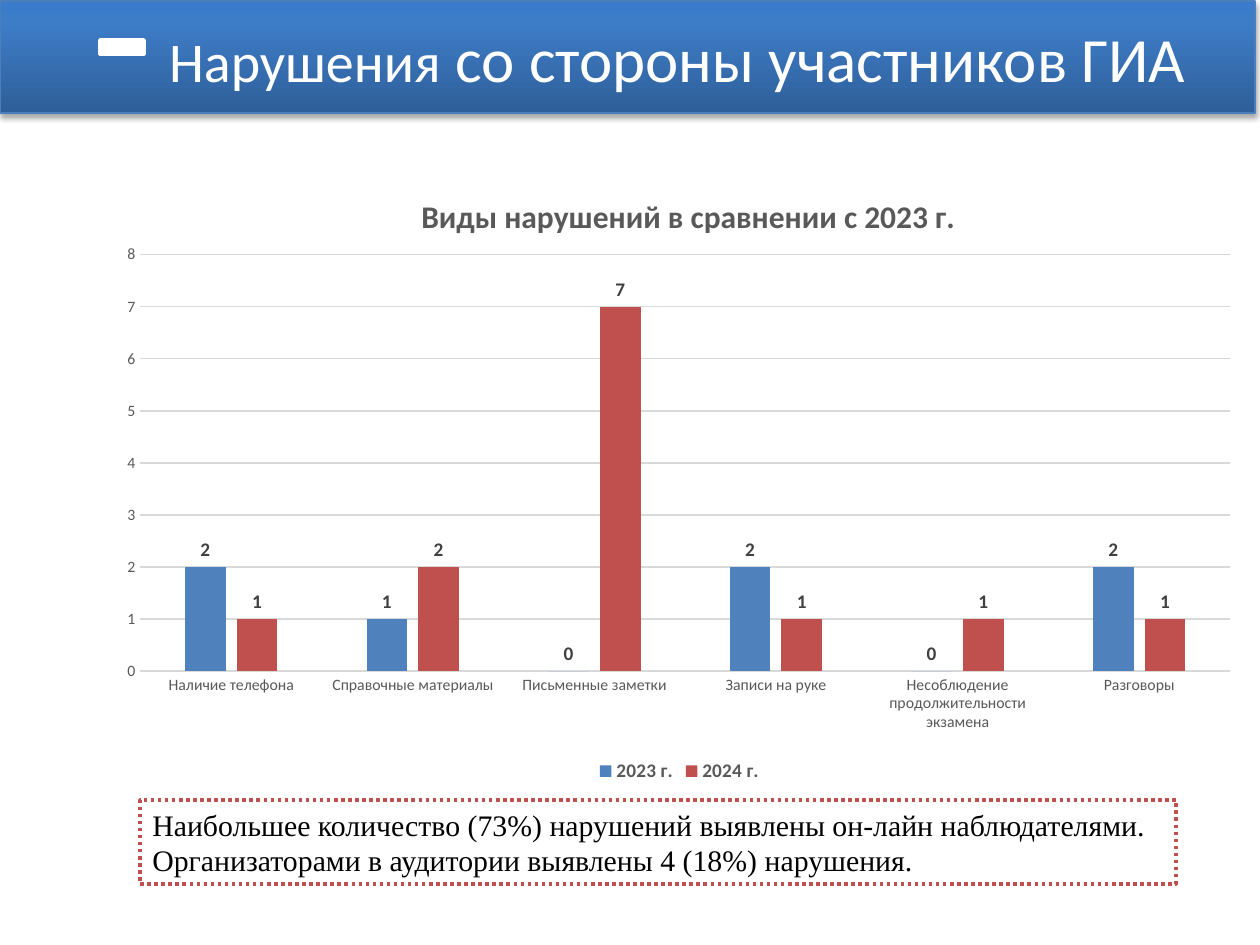
from copy import deepcopy

from lxml import etree
from pptx import Presentation
from pptx.chart.data import CategoryChartData
from pptx.dml.color import RGBColor
from pptx.enum.chart import XL_CHART_TYPE, XL_LABEL_POSITION, XL_LEGEND_POSITION, XL_TICK_MARK
from pptx.enum.dml import MSO_LINE
from pptx.enum.shapes import MSO_SHAPE
from pptx.enum.text import MSO_ANCHOR, MSO_AUTO_SIZE, PP_ALIGN
from pptx.oxml import parse_xml
from pptx.oxml.ns import nsdecls, qn
from pptx.util import Pt

PX = 914400 / 126
COLUMNS = XL_CHART_TYPE.COLUMN_CLUSTERED
OUTSIDE = XL_LABEL_POSITION.OUTSIDE_END
BOTTOM = XL_LEGEND_POSITION.BOTTOM
NO_TICK = XL_TICK_MARK.NONE
RECT = MSO_SHAPE.RECTANGLE
MIDDLE = MSO_ANCHOR.MIDDLE
CENTER, JUSTIFY = PP_ALIGN.CENTER, PP_ALIGN.JUSTIFY


def rgb(color):
    return RGBColor.from_string(color)


def set_font(font, color, **values):
    font.color.rgb = rgb(color)
    for name, value in values.items():
        setattr(font, name, value)


prs = Presentation()
prs.slide_width, prs.slide_height = int(1260 * PX), int(945 * PX)
s = prs.slides.add_slide(prs.slide_layouts[5])

sp = s.shapes.title
sp.left, sp.top, sp.width, sp.height = [int(v * PX) for v in (0, 1, 1255, 112)]
sp.fill.gradient()
sp.fill.gradient_angle = 90
stops = next(sp.element.iter(qn("a:gsLst")))
stops.append(deepcopy(stops[0]))
for stop, (pos, color) in zip(sp.fill.gradient_stops, [(0, "2F5F99"), (0.8, "3D7CC7"), (1, "3A7CCB")]):
    stop.position = pos
    stop.color.rgb = rgb(color)
sp.line.color.rgb = rgb("4B7EBC")
sp.line.width = Pt(0.75)
sp.shadow.inherit = False
effects = next(sp.element.iter(qn("a:effectLst")))
shadow = etree.SubElement(effects, qn("a:outerShdw"), blurRad="40000", dist="23000", dir="5400000", rotWithShape="0")
shade = etree.SubElement(shadow, qn("a:srgbClr"), val="000000")
etree.SubElement(shade, qn("a:alpha"), val="35000")
tf = sp.text_frame
frame_format = {"word_wrap": True, "auto_size": MSO_AUTO_SIZE.NONE, "vertical_anchor": MIDDLE,
                "margin_left": int(112 * PX), "margin_right": int(12 * PX)}
for name, value in frame_format.items():
    setattr(tf, name, value)
p = tf.paragraphs[0]
p.alignment = CENTER
for text, size in [("Нарушения", 32), (" со стороны участников ГИА", 36)]:
    r = p.add_run()
    r.text = text
    set_font(r.font, "FFFFFF", name="Calibri", size=Pt(size), bold=False)

boxes = []
for box, line in [((100, 40, 44, 14), "FFFFFF"), ((140, 800, 1036, 84), "C0504D")]:
    sp = s.shapes.add_shape(RECT, *[int(v * PX) for v in box])
    sp.shadow.inherit = False
    sp.fill.solid()
    sp.fill.fore_color.rgb = rgb("FFFFFF")
    sp.line.color.rgb = rgb(line)
    sp.line.width = Pt(2)
    boxes.append(sp)
note = boxes[1]
note.line.dash_style = MSO_LINE.ROUND_DOT
tf = note.text_frame
tf.word_wrap = True
tf.vertical_anchor = MIDDLE
tf.text = ("Наибольшее количество (73%) нарушений выявлены он-лайн наблюдателями.\n"
           "Организаторами в аудитории выявлены 4 (18%) нарушения.")
for p in tf.paragraphs:
    p.alignment = JUSTIFY
    set_font(p.runs[0].font, "000000", name="Times New Roman", size=Pt(17))

data = CategoryChartData(number_format="General")
data.categories = ["Наличие телефона", "Справочные материалы", "Письменные заметки",
                   "Записи на руке", "Несоблюдение продолжительности экзамена", "Разговоры"]
data.add_series("2023 г.", [2, 1, 0, 2, 0, 2])
data.add_series("2024 г.", [1, 2, 7, 1, 1, 1])
frame = s.shapes.add_chart(COLUMNS, *[int(v * PX) for v in (106, 157, 1147, 631)], data)
chart = frame.chart
set_font(chart.font, "000000", name="Calibri", size=Pt(10))

chart.has_title = True
chart.chart_title.include_in_layout = False
tf = chart.chart_title.text_frame
tf.text = "Виды нарушений в сравнении с 2023 г."
set_font(tf.paragraphs[0].runs[0].font, "595959", name="Calibri", size=Pt(18), bold=True)

chart.has_legend = True
chart.legend.position = BOTTOM
chart.legend.include_in_layout = False
set_font(chart.legend.font, "595959", name="Calibri", size=Pt(11), bold=True)

cat_axis, val_axis = chart.category_axis, chart.value_axis
for axis in (cat_axis, val_axis):
    axis.major_tick_mark = axis.minor_tick_mark = NO_TICK
    set_font(axis.tick_labels.font, "595959", name="Calibri", size=Pt(9), bold=False)
for name, value in {"minimum_scale": 0, "maximum_scale": 8, "major_unit": 1, "has_major_gridlines": True}.items():
    setattr(val_axis, name, value)
val_axis.format.line.fill.background()
for line in (cat_axis.format.line, val_axis.major_gridlines.format.line):
    line.color.rgb = rgb("D9D9D9")
    line.width = Pt(0.75)

plot = chart.plots[0]
plot.gap_width, plot.overlap = 219, -27
plot.vary_by_categories = False
for series, color in zip(plot.series, ["4F81BD", "C0504D"]):
    series.format.fill.solid()
    series.format.fill.fore_color.rgb = rgb(color)
    labels = series.data_labels
    labels.show_value = True
    labels.position = OUTSIDE
    set_font(labels.font, "404040", name="Calibri", size=Pt(11), bold=True)

c_chart = chart.element.find(qn("c:chart"))
layouts = [
    ("c:title", 1, {"xMode": "edge", "yMode": "edge", "x": 0.27, "y": 0.05}),
    ("c:plotArea", 0, {"layoutTarget": "inner", "xMode": "edge", "yMode": "edge",
                       "x": 0.03, "y": 0.155, "w": 0.95, "h": 0.66}),
]
for tag, index, values in layouts:
    parent = c_chart.find(qn(tag))
    for old in parent.findall(qn("c:layout")):
        parent.remove(old)
    layout = parse_xml(f'<c:layout {nsdecls("c")}><c:manualLayout/></c:layout>')
    for name, value in values.items():
        etree.SubElement(layout[0], qn(f"c:{name}"), val=str(value))
    parent.insert(index, layout)

prs.save("out.pptx")
